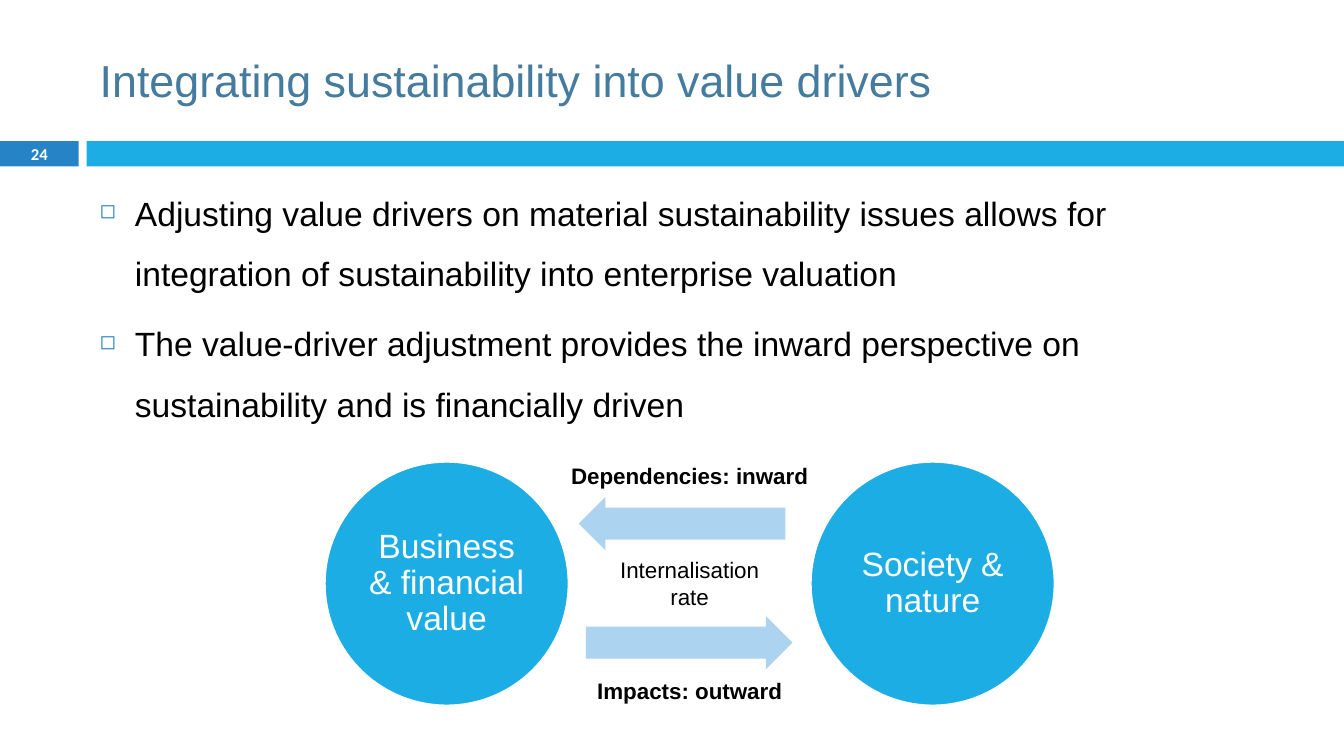
from pptx import Presentation
from pptx.dml.color import RGBColor
from pptx.enum import shapes, text
from pptx.oxml import parse_xml
from pptx.oxml.ns import nsdecls
from pptx.util import Inches, Pt

THEME = {
    "bar": "1CADE4", "accent": "2683C6", "arrow": "ACD3EF", "title": "457B9E",
    "white": "FFFFFF", "black": "000000",
    "font": "Arial", "number_font": "Calibri",
    "title_size": 32, "body_size": 24, "label_size": 16, "number_size": 11.9,
}

TITLE = "Integrating sustainability into value drivers"
PAGE = "24"
BULLETS = [
    "Adjusting value drivers on material sustainability issues allows for "
    "integration of sustainability into enterprise valuation",
    "The value-driver adjustment provides the inward perspective on "
    "sustainability and is financially driven",
]
CIRCLES = ["Business & financial value", "Society & nature"]
# text, top, width, height, bold
LABELS = [
    ("Dependencies: inward", 4.54, 2.6, 0.37, True),
    ("Internalisation rate", 5.47, 1.89, 0.64, False),
    ("Impacts: outward", 6.67, 2.85, 0.37, True),
]
# left, top, rotation
ARROWS = [(5.74, 4.93, 180), (5.81, 6.11, 0)]

CIRCLE_SIZE, CIRCLE_TOP, CIRCLE_LEFT, CIRCLE_STEP = 2.42, 4.58, 3.22, 4.82
CENTRE = CIRCLE_LEFT + (CIRCLE_STEP + CIRCLE_SIZE) / 2
BAR_TOP, BAR_HEIGHT, NUMBER_WIDTH, BAR_LEFT = 1.4, 0.25, 0.78, 0.86
SLIDE_W, SLIDE_H, MARGIN = 13.33, 7.5, 0.89


def rgb(name):
    """Return a theme colour."""
    return RGBColor.from_string(THEME[name])


def write(sp, lines, size, color, font="font", bold=False,
          align=text.PP_ALIGN.LEFT, anchor=text.MSO_ANCHOR.TOP):
    """Fill a shape with formatted paragraphs and return its text frame."""
    tf = sp.text_frame
    tf.word_wrap = True
    tf.vertical_anchor = anchor
    tf.text = "\n".join(lines)
    for p in tf.paragraphs:
        p.alignment = align
        for r in p.runs:
            r.font.name = THEME[font]
            r.font.size = Pt(THEME[size])
            r.font.bold = bold
            r.font.color.rgb = rgb(color)
    return tf


def add_box(s, *place):
    """Add a text box at left, top, width, height in inches."""
    return s.shapes.add_textbox(*map(Inches, place))


def add_shape(s, kind, fill, *place):
    """Add a flat filled shape without an outline."""
    sp = s.shapes.add_shape(kind, *map(Inches, place))
    sp.shadow.inherit = False
    sp.fill.solid()
    sp.fill.fore_color.rgb = rgb(fill)
    sp.line.fill.background()
    return sp


def add_bullet(p):
    """Give a paragraph a small square bullet and a hanging indent."""
    p.line_spacing = 1.5
    p.space_before = Pt(7)
    pPr = p._p.get_or_add_pPr()
    pPr.set("marL", str(Inches(0.35)))
    pPr.set("indent", str(-Inches(0.35)))
    ns = nsdecls("a")
    for xml in (f'<a:buClr {ns}><a:srgbClr val="{THEME["accent"]}"/></a:buClr>',
                f'<a:buSzPct {ns} val="60000"/>',
                f'<a:buChar {ns} char="\u25fb"/>'):
        pPr.append(parse_xml(xml))


def add_header(s):
    """Add the title and the bar with the page number."""
    rect, middle = shapes.MSO_SHAPE.RECTANGLE, text.MSO_ANCHOR.MIDDLE
    number = add_shape(s, rect, "accent", 0, BAR_TOP, NUMBER_WIDTH, BAR_HEIGHT)
    add_shape(s, rect, "bar", BAR_LEFT, BAR_TOP, SLIDE_W - BAR_LEFT, BAR_HEIGHT)
    write(number, [PAGE], "number_size", "white", "number_font", True,
          text.PP_ALIGN.CENTER, middle)
    write(add_box(s, MARGIN, 0.25, 11.89, 1.08), [TITLE],
          "title_size", "title", anchor=middle)


def add_body(s):
    """Add the bulleted text."""
    sp = add_box(s, MARGIN, 1.66, 11.36, 5.39)
    for p in write(sp, BULLETS, "body_size", "black").paragraphs:
        add_bullet(p)


def add_diagram(s):
    """Add the two circles with arrows and labels between them."""
    centred = text.PP_ALIGN.CENTER
    for i, name in enumerate(CIRCLES):
        sp = add_shape(s, shapes.MSO_SHAPE.OVAL, "bar", CIRCLE_LEFT + i * CIRCLE_STEP,
                       CIRCLE_TOP, CIRCLE_SIZE, CIRCLE_SIZE)
        sp.line.color.rgb = rgb("white")
        sp.line.width = Pt(1.5)
        tf = write(sp, [name], "body_size", "white", align=centred,
                   anchor=text.MSO_ANCHOR.MIDDLE)
        tf.margin_left = tf.margin_right = Inches(0.03)
        tf.margin_top = tf.margin_bottom = Inches(0.03)
        tf.paragraphs[0].line_spacing = 0.9
    for left, top, rotation in ARROWS:
        sp = add_shape(s, shapes.MSO_SHAPE.RIGHT_ARROW, "arrow", left, top, 2.05, 0.53)
        sp.adjustments[0] = 0.6
        sp.rotation = rotation
    for label, top, width, height, bold in LABELS:
        sp = add_box(s, CENTRE - width / 2, top, width, height)
        write(sp, [label], "label_size", "black", bold=bold, align=centred)


prs = Presentation()
prs.slide_width, prs.slide_height = Inches(SLIDE_W), Inches(SLIDE_H)
s = prs.slides.add_slide(prs.slide_layouts[6])
add_header(s)
add_body(s)
add_diagram(s)
prs.save("out.pptx")
